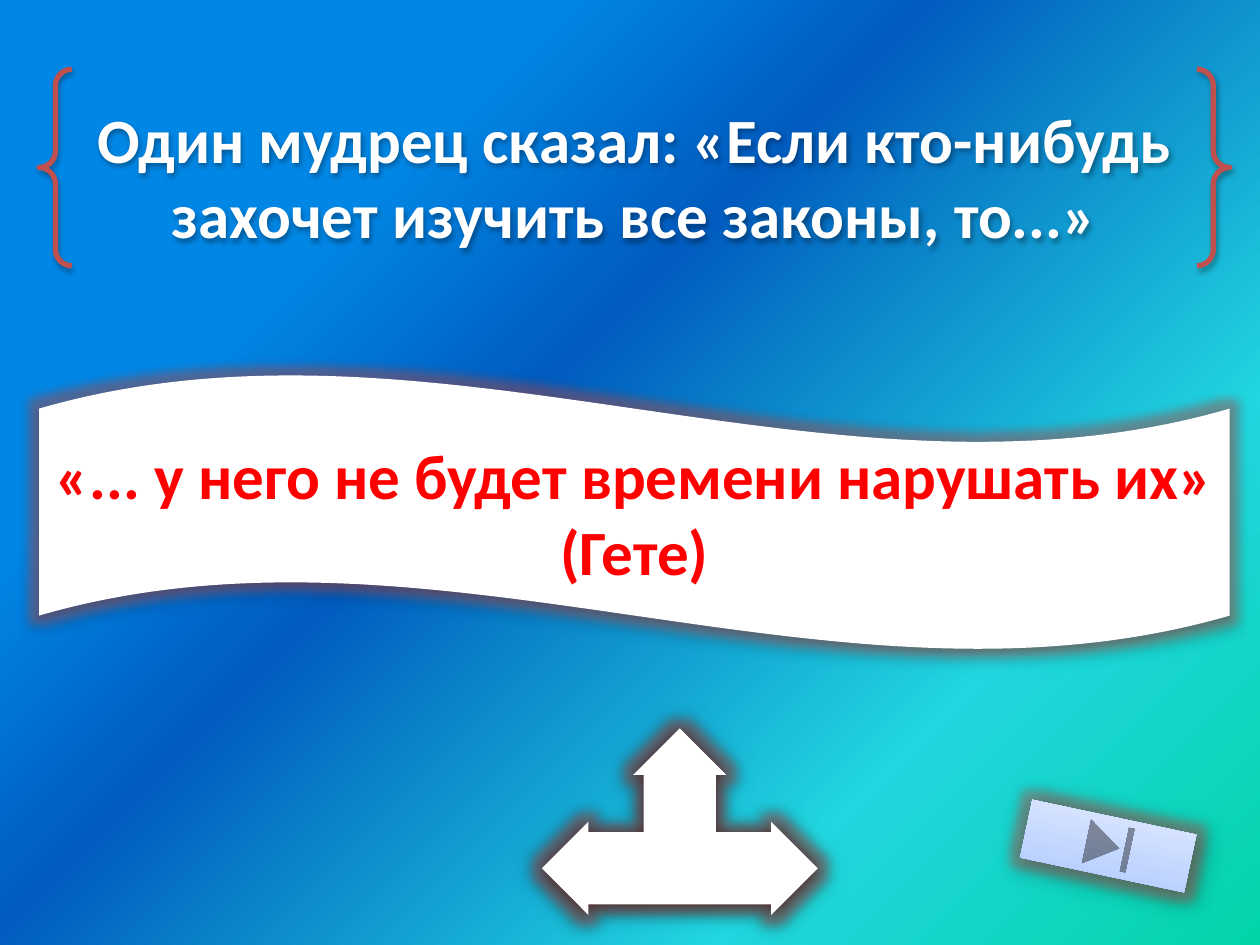
from dataclasses import dataclass

from pptx import Presentation
from pptx.dml.color import RGBColor as Rgb
from pptx.enum.shapes import MSO_SHAPE as Shape
from pptx.enum.text import MSO_ANCHOR as Anchor, PP_ALIGN as Align
from pptx.oxml import parse_xml
from pptx.oxml.ns import nsdecls, qn
from pptx.util import Pt


@dataclass(frozen=True)
class Theme:
    font: str = "Calibri"
    size: int = 36
    light: str = "FFFFFF"
    answer: str = "FF0000"
    accent: str = "C0504D"
    dark: str = "000000"
    sky: tuple = ((0, "03D4A8"), (25, "21D6E0"), (58, "005CBF"), (75, "0087E6"))
    button: tuple = ((0, "A4C4FF"), (35, "BFD4FF"), (100, "E6EEFF"))


def colour_xml(colour, alpha=100):
    return f'<a:srgbClr val="{colour}"><a:alpha val="{alpha * 1000}"/></a:srgbClr>'


def gradient(stops, direction):
    marks = "".join(f'<a:gs pos="{pos * 1000}">{colour_xml(colour)}</a:gs>' for pos, colour in stops)
    return parse_xml(
        f'<a:gradFill {nsdecls("a")} rotWithShape="1"><a:gsLst>{marks}</a:gsLst>{direction}</a:gradFill>'
    )


class SlideBuilder:
    """Draws styled elements on the current slide."""

    def __init__(self, slide, theme):
        self.slide, self.theme = slide, theme

    def background(self):
        self.slide.background.fill.solid()
        backdrop = self.slide.element.find(".//" + qn("p:bgPr"))
        corner = '<a:path path="circle"><a:fillToRect l="100000" t="100000"/></a:path>'
        backdrop.replace(backdrop[0], gradient(self.theme.sky, corner))

    def figure(self, kind, frame, shadow, fill=None, line=None, glow=True):
        figure = self.slide.shapes.add_shape(kind, *map(Pt, frame))
        if fill:
            figure.fill.solid()
            figure.fill.fore_color.rgb = Rgb.from_string(fill)
        else:
            figure.fill.background()
        if line:
            figure.line.color.rgb = Rgb.from_string(line)
            figure.line.width = Pt(3)
        else:
            figure.line.fill.background()
        self.effects(figure, shadow, glow)
        return figure

    def effects(self, figure, shadow, glow):
        figure.shadow.inherit = False
        effects = figure.element.spPr.find(qn("a:effectLst"))
        if glow:
            effects.append(parse_xml(
                f'<a:glow {nsdecls("a")} rad="{Pt(11)}">{colour_xml(self.theme.accent, 40)}</a:glow>'
            ))
        alpha, blur, distance, angle = shadow
        effects.append(parse_xml(
            f'<a:outerShdw {nsdecls("a")} blurRad="{Pt(blur)}" dist="{Pt(distance)}" '
            f'dir="{angle * 60000}" rotWithShape="0">{colour_xml(self.theme.dark, alpha)}</a:outerShdw>'
        ))

    def caption(self, figure, wording, colour):
        frame = figure.text_frame
        frame.word_wrap, frame.vertical_anchor = True, Anchor.MIDDLE
        paragraph = frame.paragraphs[0]
        paragraph.alignment = Align.CENTER
        run = paragraph.add_run()
        run.text = wording
        for name, value in {"name": self.theme.font, "size": Pt(self.theme.size), "bold": True}.items():
            setattr(run.font, name, value)
        run.font.color.rgb = Rgb.from_string(colour)

    def shade(self, figure, stops):
        properties = figure.element.spPr
        plain = properties.find(qn("a:solidFill"))
        properties.replace(plain, gradient(stops, '<a:lin ang="16200000" scaled="1"/>'))


def main():
    deck = Presentation()
    deck.slide_width, deck.slide_height = Pt(720), Pt(540)
    theme = Theme()
    page = SlideBuilder(deck.slides.add_slide(deck.slide_layouts[6]), theme)
    page.background()

    saying = page.figure(Shape.DOUBLE_BRACE, (22.3, 39.6, 680.4, 112.3), (35, 3.1, 1.8, 90),
                         line=theme.accent, glow=False)
    page.caption(saying, "Один мудрец сказал: «Если кто-нибудь захочет изучить все законы, то...»", theme.light)

    ending = page.figure(Shape.WAVE, (22.3, 213.8, 680.4, 157.7), (32, 3.5, 2.2, 90), fill=theme.light)
    page.caption(ending, "«... у него не будет времени нарушать их» (Гете)", theme.answer)

    arrows = page.figure(Shape.LEFT_RIGHT_UP_ARROW, (309.6, 416.2, 157.7, 106.6), (100, 8.5, 1, 90),
                         fill=theme.light)
    for index, ratio in enumerate((0.386, 0.25, 0.25)):
        arrows.adjustments[index] = ratio

    finish = page.figure(Shape.ACTION_BUTTON_END, (585.4, 466.6, 95.8, 33.8), (45, 10, 3, 45), fill=theme.light)
    page.shade(finish, theme.button)
    finish.rotation = 12

    deck.save("out.pptx")


if __name__ == "__main__":
    main()
